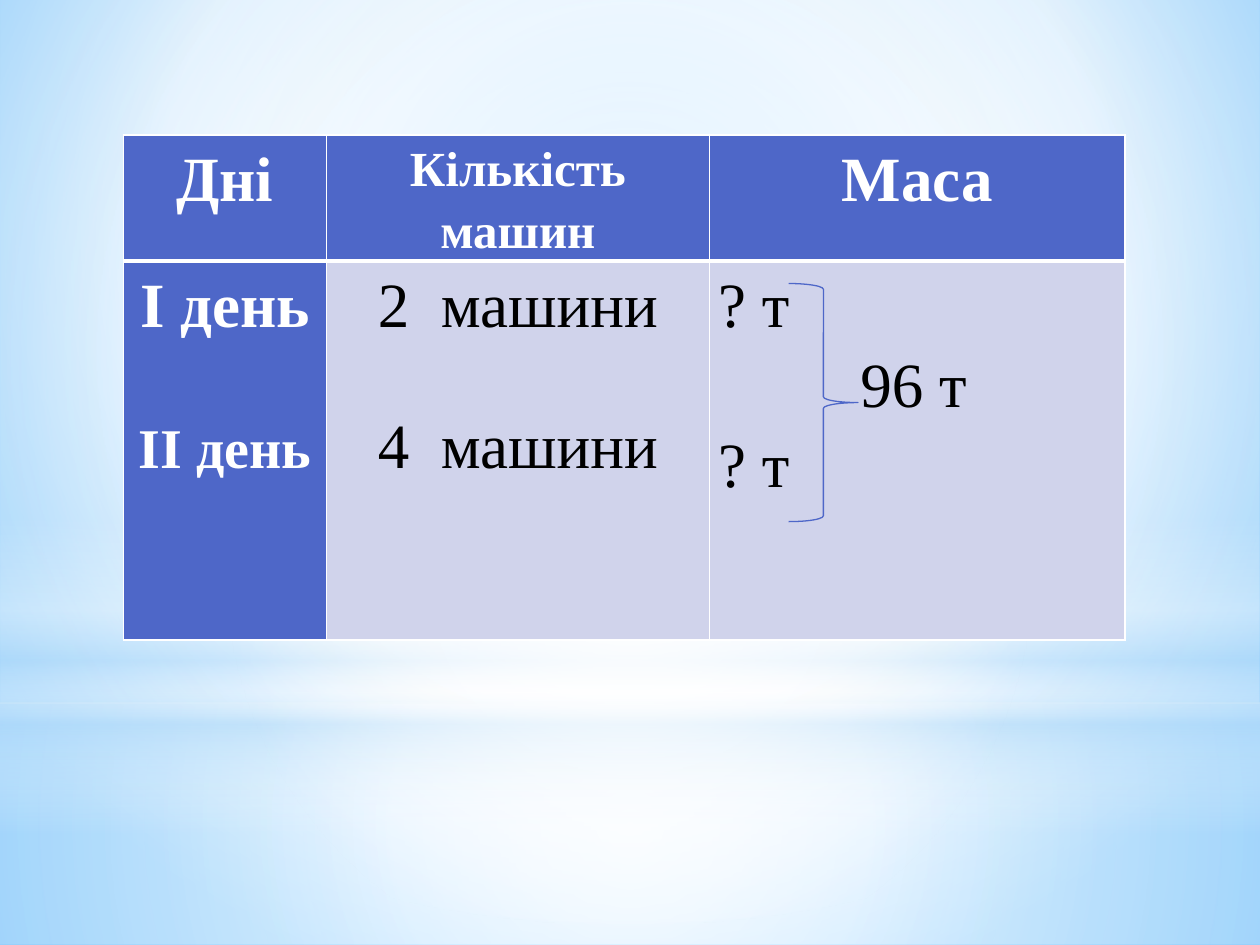
from lxml import etree
from pptx import Presentation
from pptx.dml.color import RGBColor
from pptx.enum.shapes import MSO_SHAPE
from pptx.enum.text import PP_ALIGN
from pptx.oxml.ns import qn
from pptx.util import Inches, Pt

RECT, OVAL, BRACE = MSO_SHAPE.RECTANGLE, MSO_SHAPE.OVAL, MSO_SHAPE.RIGHT_BRACE
LEFT, MID = PP_ALIGN.LEFT, PP_ALIGN.CENTER
WIDE, HIGH = 10, 7.5
FONT = "Times New Roman"
BLUE, PALE, WHITE, BLACK, SKY = "4E67C8", "D0D3EB", "FFFFFF", "000000", "B4DCFA"

BACK = [(0, "9ED5FF", 100), (60, WHITE, 100), (100, "5BB9FF", 100)]
CORE = (50, 50, 50, 50)
GLOWS = [
    (RECT, 5.58, 1.92, [(0, WHITE, 91), (37, WHITE, 76), (100, SKY, 79)], CORE),
    (RECT, 0, 5.58, [(0, WHITE, 89), (48, WHITE, 62), (100, SKY, 79)], CORE),
    (RECT, 4.12, 2.5, [(0, WHITE, 0), (29, WHITE, 30), (45, SKY, 40),
                       (55, WHITE, 26), (65, SKY, 60), (100, WHITE, 0)], None),
    (OVAL, 1.75, 5.58, [(0, WHITE, 100), (56, WHITE, 0)], CORE),
]

COLS, ROWS = [1.61, 3.04, 3.3], [1, 3.01]
# Each line: text, size, space before, indent
CELLS = [
    [[("Дні", 36, 0, 0)], [("Кількість машин", 28, 0, 0)], [("Маса", 36, 0, 0)]],
    [[("І день", 36, 0, 0), ("ІІ день", 32, 39, 0)],
     [("2  машини", 36, 0, 0), ("4  машини", 36, 35, 0)],
     [("? т", 36, 0, 0), ("96 т", 36, 0, 1.13), ("? т", 36, 0, 0)]],
]


def color(text):
    return RGBColor.from_string(text)


def node(top, tag, **attrs):
    return etree.SubElement(top, qn(tag), {k: str(v) for k, v in attrs.items()})


def blend(fill, root, stops, focus):
    fill.gradient()
    grad = next(root.iter(qn("a:gradFill")))
    for kid in list(grad):
        grad.remove(kid)
    line = node(grad, "a:gsLst")
    for pos, tint, alpha in stops:
        rgb = node(node(line, "a:gs", pos=pos * 1000), "a:srgbClr", val=tint)
        node(rgb, "a:alpha", val=alpha * 1000)
    if focus:
        way = node(grad, "a:path", path="circle")
        node(way, "a:fillToRect", **{k: v * 1000 for k, v in zip("ltrb", focus)})
    else:
        node(grad, "a:lin", ang=90 * 60000, scaled=0)


def edge(cell, row):
    props = cell._tc.get_or_add_tcPr()
    thick = {"T": row == 1, "B": row == 0}
    for spot, side in enumerate("LRTB"):
        line = node(props, f"a:ln{side}", w=Pt(3 if thick.get(side) else 1))
        node(node(line, "a:solidFill"), "a:srgbClr", val=WHITE)
        props.insert(spot, line)


def write(cell, lines, head, align):
    cell.margin_left = cell.margin_right = Inches(0.07)
    cell.margin_top = cell.margin_bottom = 0
    cell.fill.solid()
    cell.fill.fore_color.rgb = color(BLUE if head else PALE)
    frame = cell.text_frame
    frame.text = "\n".join(line[0] for line in lines)
    for para, (_, size, gap, indent) in zip(frame.paragraphs, lines):
        para.alignment = align
        para.line_spacing = 1.15
        para.space_before = Pt(gap)
        if indent:
            props = para._p.get_or_add_pPr()
            props.set("marL", str(Inches(indent)))
            props.set("indent", "0")
        font = para.runs[0].font
        font.name, font.size, font.bold = FONT, Pt(size), head
        font.color.rgb = color(WHITE if head else BLACK)


def main():
    deck = Presentation()
    deck.slide_width, deck.slide_height = Inches(WIDE), Inches(HIGH)
    slide = deck.slides.add_slide(deck.slide_layouts[6])
    blend(slide.background.fill, slide._element, BACK, (20, 10, 20, 60))
    for kind, top, high, stops, focus in GLOWS:
        glow = slide.shapes.add_shape(kind, 0, Inches(top), Inches(WIDE), Inches(high))
        glow.shadow.inherit = False
        glow.line.fill.background()
        blend(glow.fill, glow._element, stops, focus)

    table = slide.shapes.add_table(
        len(ROWS), len(COLS), Inches(0.98), Inches(1.07),
        Inches(sum(COLS)), Inches(sum(ROWS))).table
    table.horz_banding = False
    table.first_col = True
    for col, wide in zip(table.columns, COLS):
        col.width = Inches(wide)
    for r, cells in enumerate(CELLS):
        table.rows[r].height = Inches(ROWS[r])
        for c, lines in enumerate(cells):
            cell = table.cell(r, c)
            write(cell, lines, r == 0 or c == 0, LEFT if r == 1 and c == 2 else MID)
            edge(cell, r)

    brace = slide.shapes.add_shape(
        BRACE, Inches(6.26), Inches(2.25), Inches(0.55), Inches(1.89))
    brace.shadow.inherit = False
    brace.fill.background()
    brace.line.color.rgb = color(BLUE)
    brace.line.width = Pt(0.75)
    deck.save("out.pptx")


if __name__ == "__main__":
    main()
